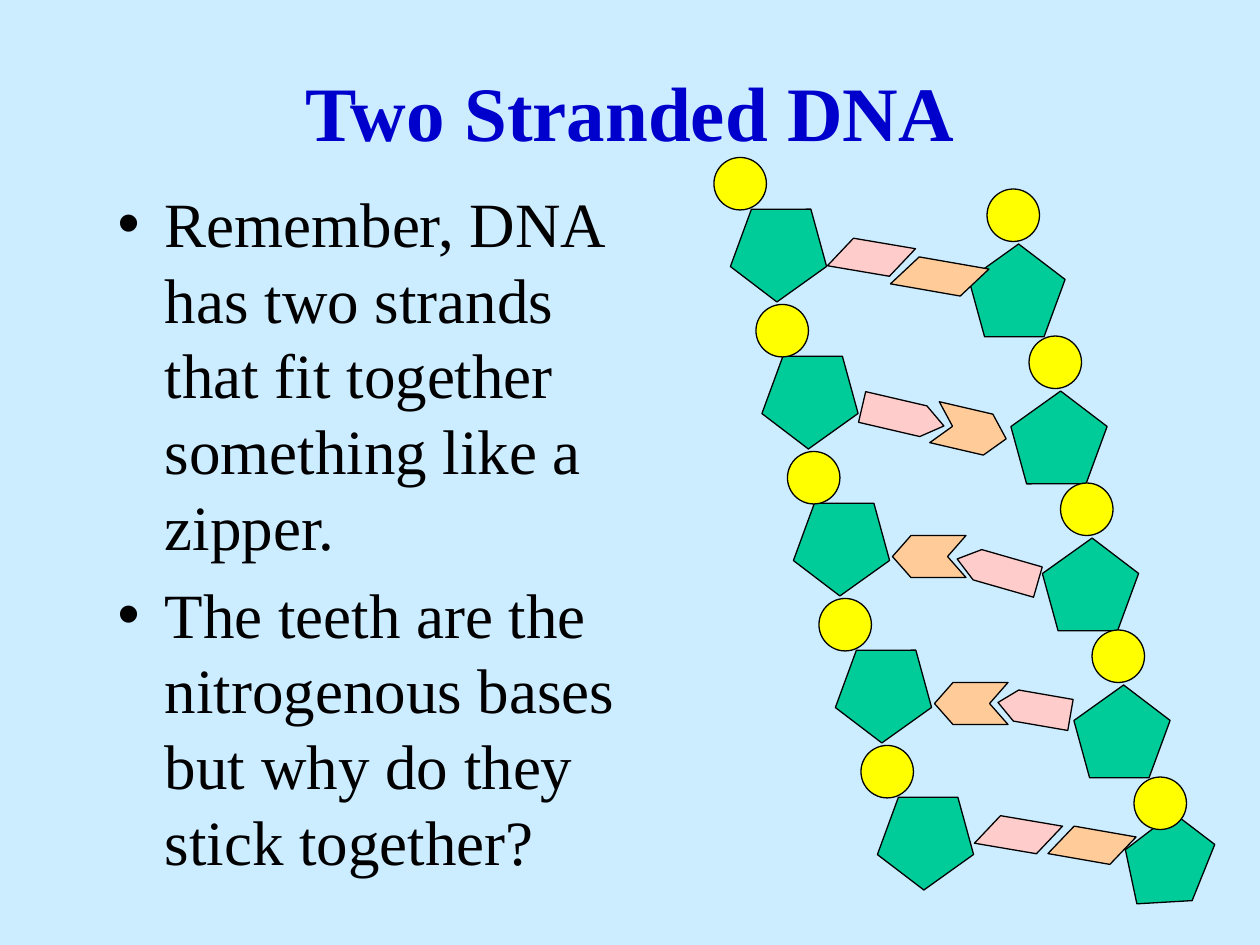
from pptx import Presentation
from pptx.dml.color import RGBColor
from pptx.enum.shapes import MSO_SHAPE
from pptx.enum.text import MSO_ANCHOR, MSO_AUTO_SIZE, PP_ALIGN
from pptx.util import Pt

FONT = "Times New Roman"
SUGAR, PHOSPHATE, PINK, ORANGE = "00CC99", "FFFF00", "FFCCCC", "FFCC99"


def color(hex_value):
    return RGBColor.from_string(hex_value)


def add_part(kind, left, top, width, height, rotation, fill, adjustment=None):
    part = strands.shapes.add_shape(kind, Pt(left), Pt(top), Pt(width), Pt(height))
    part.rotation = rotation
    part.shadow.inherit = False
    part.fill.solid()
    part.fill.fore_color.rgb = color(fill)
    part.line.color.rgb = color("000000")
    part.line.width = Pt(0.75)
    if adjustment is not None:
        part.adjustments[0] = adjustment


prs = Presentation()
prs.slide_width, prs.slide_height = Pt(720), Pt(540)
slide = prs.slides.add_slide(prs.slide_layouts[1])
slide.background.fill.solid()
slide.background.fill.fore_color.rgb = color("CCECFF")

title = slide.shapes.title
title.left, title.top, title.width, title.height = Pt(54), Pt(18), Pt(612), Pt(90)
title.text_frame.text = "Two Stranded DNA"
title.text_frame.vertical_anchor = MSO_ANCHOR.MIDDLE
heading = title.text_frame.paragraphs[0]
heading.alignment = PP_ALIGN.CENTER
heading_font = heading.runs[0].font
heading_font.name, heading_font.size, heading_font.bold = FONT, Pt(44), True
heading_font.color.rgb = color("0000CC")

facts = slide.placeholders[1]
facts.left, facts.top, facts.width, facts.height = Pt(60), Pt(102), Pt(306), Pt(420)
facts.text_frame.text = (
    "Remember, DNA has two strands that fit together something like a zipper.\n"
    "The teeth are the nitrogenous bases but why do they stick together?"
)
facts.text_frame.auto_size = MSO_AUTO_SIZE.NONE
for index, fact in enumerate(facts.text_frame.paragraphs):
    fact.line_spacing = 1.0
    fact.space_before = Pt(7.2 if index else 0)
    fact_font = fact.runs[0].font
    fact_font.name, fact_font.size = FONT, Pt(36)
    fact_font.color.rgb = color("000000")

strands = slide.shapes.add_group_shape()
STEP = 84

left_sugars = [420, 438, 456, 480, 504]
left_phosphates = [408, 432, 450, 468, 492]
for level, (sugar, phosphate) in enumerate(zip(left_sugars, left_phosphates)):
    drop = level * STEP
    add_part(MSO_SHAPE.REGULAR_PENTAGON, sugar, 114 + drop, 54, 54, 37.3, SUGAR)
    add_part(MSO_SHAPE.OVAL, phosphate, 90 + drop, 30, 30, 0, PHOSPHATE)

right_sugars = [(552, 144, 54), (576, 228, 54), (594, 312, 54), (612, 396, 54), (642, 468, 48)]
right_phosphates = [564, 588, 606, 624, 648]
for level, ((left, top, width), phosphate) in enumerate(zip(right_sugars, right_phosphates)):
    add_part(MSO_SHAPE.REGULAR_PENTAGON, left, top, width, 54, 217.3, SUGAR)
    add_part(MSO_SHAPE.OVAL, phosphate, 108 + level * STEP, 30, 30, 180, PHOSPHATE)

bases = [
    (MSO_SHAPE.PARALLELOGRAM, 474, 138, 48, 18, 9.6, PINK, 0.67),
    (MSO_SHAPE.PARALLELOGRAM, 510, 149, 54, 18, 189.9, ORANGE, 0.75),
    (MSO_SHAPE.PENTAGON, 492, 229, 48, 18, 13.1, PINK, 0.67),
    (MSO_SHAPE.CHEVRON, 533.5, 234, 42, 24, 13.1, ORANGE, 0.44),
    (MSO_SHAPE.CHEVRON, 510, 306, 42, 24, 180, ORANGE, 0.44),
    (MSO_SHAPE.PENTAGON, 546, 317, 48, 18, 196, PINK, 0.67),
    (MSO_SHAPE.CHEVRON, 534, 390, 42, 24, 180, ORANGE, 0.44),
    (MSO_SHAPE.PENTAGON, 570, 396, 42, 18, 189.8, PINK, 0.58),
    (MSO_SHAPE.PARALLELOGRAM, 558, 468, 48, 18, 9.6, PINK, 0.67),
    (MSO_SHAPE.PARALLELOGRAM, 600, 474, 48, 18, 189.9, ORANGE, 0.67),
]
for base in bases:
    add_part(*base)

prs.save("out.pptx")
